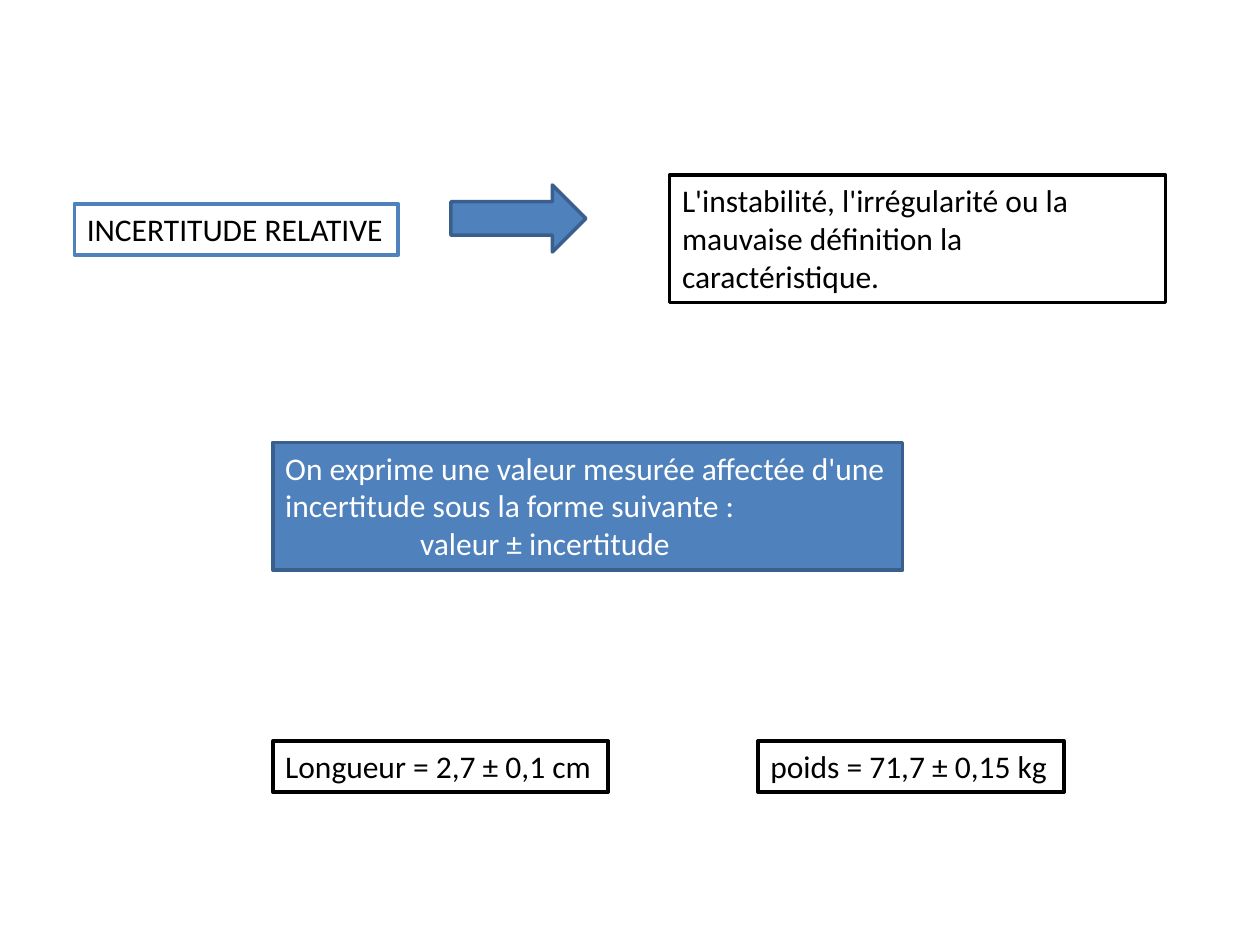
from pptx import Presentation
from pptx import util as u
from pptx.dml.color import RGBColor
from pptx.enum import shapes, text

HUES = {"white": "FFFFFF", "black": "000000", "blue": "4F81BD", "navy": "3A5F8C"}
LINE = 1.03
BLOCK = 2.57


def hue(name):
    """Return the named colour."""
    return RGBColor.from_string(HUES[name])


def draw(slide, kind, box, fill, edge):
    """Add a filled, outlined shape in a box given in centimetres."""
    shape = slide.shapes.add_shape(kind, *map(u.Cm, box))
    shape.shadow.inherit = False
    shape.fill.solid()
    shape.fill.fore_color.rgb = hue(fill)
    shape.line.color.rgb = hue(edge)
    shape.line.width = u.Pt(2)
    return shape


def label(slide, box, lines, fill="white", edge="black", ink="black", wrap=False):
    """Add a framed text box and return its paragraphs."""
    shape = draw(slide, shapes.MSO_SHAPE.RECTANGLE, box, fill, edge)
    frame = shape.text_frame
    frame.text = "\n".join(lines)
    frame.word_wrap = wrap
    frame.auto_size = text.MSO_AUTO_SIZE.SHAPE_TO_FIT_TEXT
    frame.vertical_anchor = text.MSO_ANCHOR.TOP
    for para in frame.paragraphs:
        para.alignment = text.PP_ALIGN.LEFT
        para.font.name = "Calibri"
        para.font.size = u.Pt(18)
        para.font.color.rgb = hue(ink)
    return frame.paragraphs


def cause(slide, left, top, width):
    """Place the term, the arrow and its meaning."""
    label(slide, (left, top + 0.58, 6.53, LINE), ["INCERTITUDE RELATIVE"], edge="blue")
    draw(slide, shapes.MSO_SHAPE.RIGHT_ARROW,
         (left + 7.59, top + 0.2, 2.72, 1.35), "blue", "navy")
    label(slide, (left + width - 10, top, 10, BLOCK),
          ["L'instabilité, l'irrégularité ou la mauvaise définition la caractéristique."],
          wrap=True)


def rule(slide, left, top, width):
    """Place the general form with its formula indented."""
    paras = label(slide, (left, top, width, BLOCK),
                  ["On exprime une valeur mesurée affectée d'une incertitude "
                   "sous la forme suivante :", "valeur ± incertitude"],
                  "blue", "navy", "white", True)
    paras[1]._p.get_or_add_pPr().set("marL", str(u.Cm(2.72)))


def cases(slide, left, top, width):
    """Place the two worked values at both ends of the row."""
    label(slide, (left, top, 6.76, LINE), ["Longueur = 2,7 ± 0,1 cm"])
    label(slide, (left + width - 6.17, top, 6.17, LINE), ["poids = 71,7 ± 0,15 kg"])


def main():
    """Build and save the slide."""
    deck = Presentation()
    deck.slide_width, deck.slide_height = u.Cm(25.4), u.Cm(19.05)
    slide = deck.slides.add_slide(deck.slide_layouts[6])
    cause(slide, 1.5, 3.53, 22)
    rule(slide, 5.5, 8.92, 12.7)
    cases(slide, 5.5, 14.94, 15.95)
    deck.save("out.pptx")


if __name__ == "__main__":
    main()
